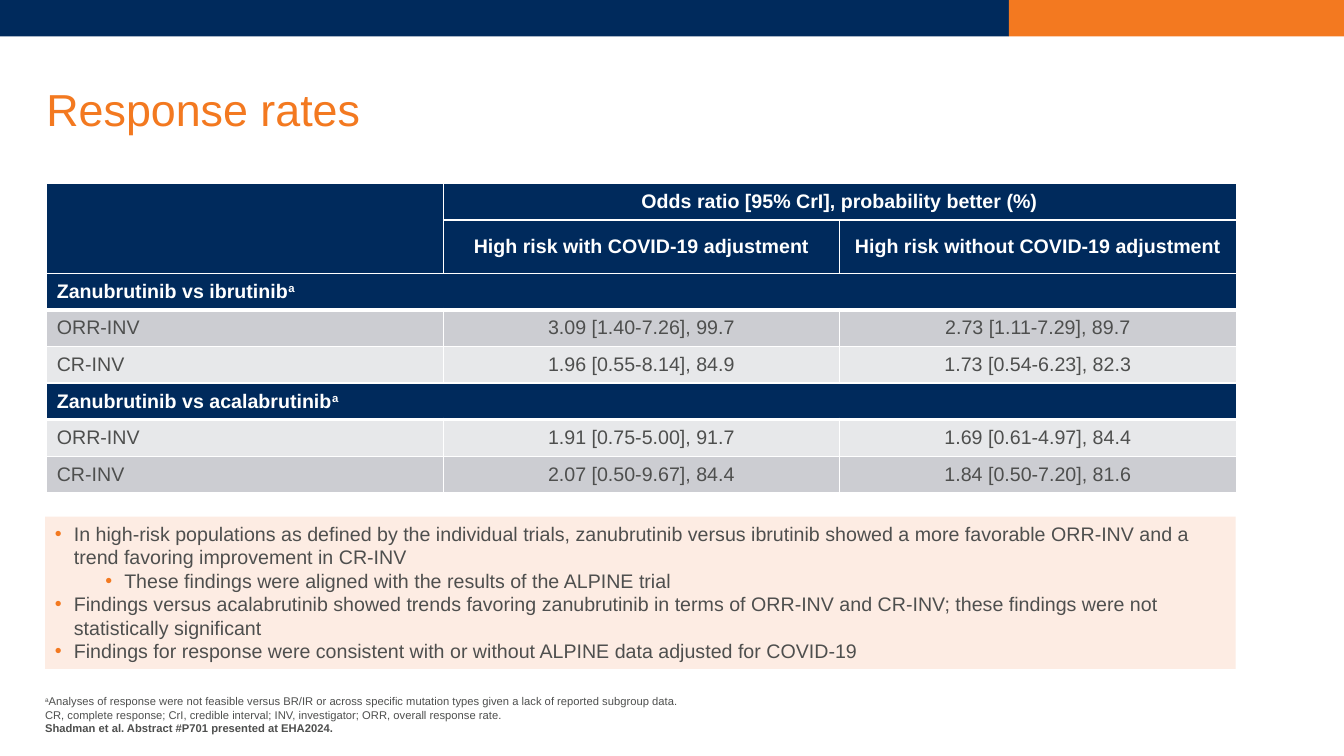
from dataclasses import dataclass

from lxml.etree import SubElement
from pptx import Presentation
from pptx.dml.color import RGBColor
from pptx.enum.shapes import MSO_SHAPE as Shape
from pptx.enum.text import MSO_ANCHOR as Anchor, MSO_AUTO_SIZE as Fit, PP_ALIGN as Align
from pptx.oxml import parse_xml
from pptx.oxml.ns import nsdecls, qn
from pptx.util import Pt

NAVY = RGBColor(0x00, 0x2A, 0x5C)
ORANGE = RGBColor(0xF3, 0x79, 0x20)
PEACH = RGBColor(0xFD, 0xEC, 0xE3)
GRAY = RGBColor(0x4E, 0x4F, 0x4E)
DARK = RGBColor(0xCC, 0xCD, 0xD2)
LIGHT = RGBColor(0xE7, 0xE8, 0xEA)
WHITE = RGBColor(0xFF, 0xFF, 0xFF)
FONT = "Arial"


@dataclass
class Box:
    left: float
    top: float
    width: float
    height: float

    def place(self) -> tuple:
        return Pt(self.left), Pt(self.top), Pt(self.width), Pt(self.height)


@dataclass
class Row:
    texts: tuple
    fill: RGBColor = NAVY
    height: float = 26.15
    section: bool = False


@dataclass
class Point:
    text: str
    level: int = 0


BARS = [(Box(0, 0, 720.7, 26), NAVY), (Box(720.7, 0, 239.3, 26), ORANGE)]
TITLE = Box(33.1, 45.4, 895, 69.8)
GRID = Box(33.4, 131, 849.6, 221)
CALLOUT = Box(32.2, 369, 850.5, 108.7)
NOTE = Box(32.2, 494.6, 671.8, 30.2)

ROWS = [
    Row(("", "Odds ratio [95% CrI], probability better (%)", "")),
    Row(("", "High risk with COVID-19 adjustment",
         "High risk without COVID-19 adjustment"), height=38),
    Row(("Zanubrutinib vs ibrutinib", "", ""), section=True),
    Row(("ORR-INV", "3.09 [1.40-7.26], 99.7", "2.73 [1.11-7.29], 89.7"), DARK),
    Row(("CR-INV", "1.96 [0.55-8.14], 84.9", "1.73 [0.54-6.23], 82.3"), LIGHT),
    Row(("Zanubrutinib vs acalabrutinib", "", ""), section=True),
    Row(("ORR-INV", "1.91 [0.75-5.00], 91.7", "1.69 [0.61-4.97], 84.4"), LIGHT),
    Row(("CR-INV", "2.07 [0.50-9.67], 84.4", "1.84 [0.50-7.20], 81.6"), DARK),
]
POINTS = [
    Point("In high-risk populations as defined by the individual trials, zanubrutinib versus "
          "ibrutinib showed a more favorable ORR-INV and a trend favoring improvement in CR-INV"),
    Point("These findings were aligned with the results of the ALPINE trial", 1),
    Point("Findings versus acalabrutinib showed trends favoring zanubrutinib in terms of "
          "ORR-INV and CR-INV; these findings were not statistically significant"),
    Point("Findings for response were consistent with or without ALPINE data adjusted for COVID-19"),
]
NOTES = [
    "Analyses of response were not feasible versus BR/IR or across specific mutation types "
    "given a lack of reported subgroup data.",
    "CR, complete response; CrI, credible interval; INV, investigator; ORR, overall response rate.",
    "Shadman et al. Abstract #P701 presented at EHA2024.",
]


def style(para, size: float, color: RGBColor, bold: bool = False) -> None:
    for run in para.runs:
        run.font.name = FONT
        run.font.size = Pt(size)
        run.font.bold = bold
        run.font.color.rgb = color


def raise_run(run) -> None:
    run._r.get_or_add_rPr().set("baseline", "30000")


def add_rect(slide, box: Box, fill: RGBColor):
    rect = slide.shapes.add_shape(Shape.RECTANGLE, *box.place())
    rect.shadow.inherit = False
    rect.fill.solid()
    rect.fill.fore_color.rgb = fill
    rect.line.fill.background()
    return rect


def clear_insets(frame) -> None:
    frame.margin_left = frame.margin_right = 0
    frame.margin_top = frame.margin_bottom = 0


def add_title(slide) -> None:
    title = slide.shapes.title
    title.left, title.top, title.width, title.height = TITLE.place()
    frame = title.text_frame
    frame.text = "Response rates"
    frame.auto_size = Fit.NONE
    frame.vertical_anchor = Anchor.MIDDLE
    clear_insets(frame)
    para = frame.paragraphs[0]
    para.alignment = Align.LEFT
    para.line_spacing = 0.9
    style(para, 32, ORANGE)


def set_borders(cell, top: float, base: float) -> None:
    props = cell._tc.get_or_add_tcPr()
    sides = [("lnL", 1), ("lnR", 1), ("lnT", top), ("lnB", base)]
    for spot, (tag, width) in enumerate(sides):
        props.insert(spot, parse_xml(
            f'<a:{tag} {nsdecls("a")} w="{Pt(width)}"><a:solidFill>'
            f'<a:srgbClr val="{WHITE}"/></a:solidFill></a:{tag}>'))


def fill_cell(cell, row: Row, col: int, after: bool) -> None:
    cell.fill.solid()
    cell.fill.fore_color.rgb = row.fill
    cell.vertical_anchor = Anchor.MIDDLE
    cell.margin_top = cell.margin_bottom = 0
    set_borders(cell, 3 if after else 1, 3 if row.section else 1)
    if not row.texts[col]:
        return
    cell.text_frame.text = row.texts[col]
    para = cell.text_frame.paragraphs[0]
    para.alignment = Align.CENTER if col else Align.LEFT
    if row.section:
        mark = para.add_run()
        mark.text = "a"
        raise_run(mark)
    head = row.fill == NAVY
    style(para, 14, WHITE if head else GRAY, head)


def add_grid(slide) -> None:
    table = slide.shapes.add_table(len(ROWS), 3, *GRID.place()).table
    for col in table.columns:
        col.width = Pt(GRID.width / 3)
    for i, row in enumerate(ROWS):
        table.rows[i].height = Pt(row.height)
        after = i > 0 and ROWS[i - 1].section
        for col in range(3):
            fill_cell(table.cell(i, col), row, col, after)
        if row.section:
            table.cell(i, 0).merge(table.cell(i, 2))
    table.cell(0, 0).merge(table.cell(1, 0))
    table.cell(0, 1).merge(table.cell(0, 2))


def add_bullet(para, level: int) -> None:
    para.level = level
    props = para._p.get_or_add_pPr()
    props.set("marL", str(Pt(13.5 + 36 * level)))
    props.set("indent", str(Pt(-13.5)))
    tint = SubElement(props, qn("a:buClr"))
    SubElement(tint, qn("a:srgbClr")).set("val", str(ORANGE))
    SubElement(props, qn("a:buFont")).set("typeface", FONT)
    SubElement(props, qn("a:buChar")).set("char", "•")


def add_callout(slide) -> None:
    frame = add_rect(slide, CALLOUT, PEACH).text_frame
    frame.word_wrap = True
    frame.vertical_anchor = Anchor.TOP
    frame.text = "\n".join(point.text for point in POINTS)
    for para, point in zip(frame.paragraphs, POINTS):
        para.alignment = Align.LEFT
        add_bullet(para, point.level)
        style(para, 14, GRAY)


def add_notes(slide) -> None:
    frame = slide.shapes.add_textbox(*NOTE.place()).text_frame
    frame.word_wrap = True
    frame.vertical_anchor = Anchor.BOTTOM
    clear_insets(frame)
    frame.text = "\n".join(["a"] + NOTES[1:])
    first, _, last = frame.paragraphs
    raise_run(first.runs[0])
    first.add_run().text = NOTES[0]
    for para in frame.paragraphs:
        style(para, 8, GRAY, para._p is last._p)


def main() -> None:
    deck = Presentation()
    deck.slide_width, deck.slide_height = Pt(960), Pt(540)
    slide = deck.slides.add_slide(deck.slide_layouts[5])
    for box, fill in BARS:
        add_rect(slide, box, fill)
    add_title(slide)
    add_grid(slide)
    add_callout(slide)
    add_notes(slide)
    deck.save("out.pptx")


if __name__ == "__main__":
    main()
